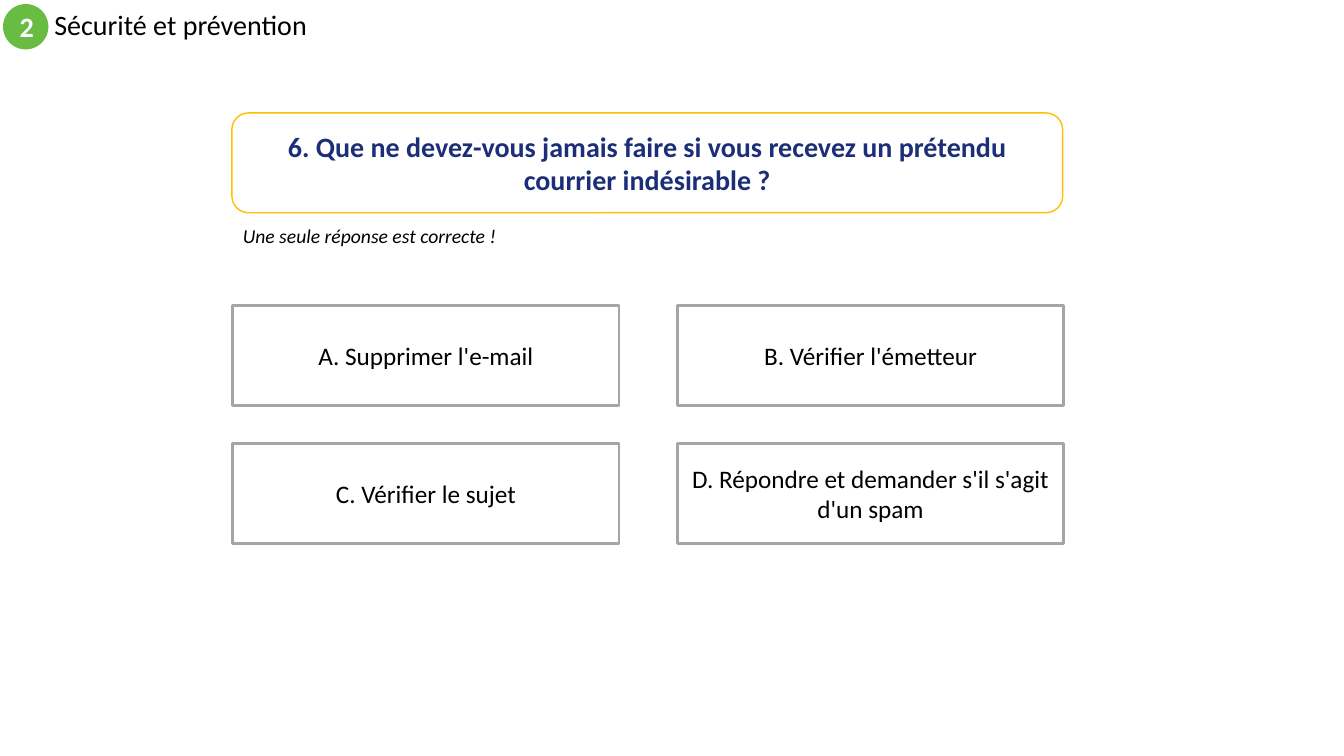
"""Build a quiz slide on security and prevention with four possible answers."""
from dataclasses import dataclass
from typing import Optional

from pptx import Presentation
from pptx.dml.color import RGBColor
from pptx.enum import shapes, text
from pptx.slide import Slide
from pptx.util import Inches, Pt


@dataclass(frozen=True)
class Theme:
    """Colours, font and type sizes of the slide."""
    font: str = "Calibri"
    white: str = "FFFFFF"
    black: str = "000000"
    green: str = "68BC42"
    gold: str = "FFC000"
    navy: str = "1C2E78"
    grey: str = "A5A5A5"
    heading: int = 20
    answer: int = 18
    hint: int = 14


THEME = Theme()


@dataclass(frozen=True)
class Block:
    """A piece of text with its place, optional outline shape and style."""
    wording: str
    left: float
    top: float
    width: float
    height: float
    size: int
    color: str = THEME.black
    bold: bool = False
    italic: bool = False
    preset: Optional[shapes.MSO_SHAPE] = None
    fill: str = THEME.white
    line: Optional[str] = None
    line_width: float = 1
    anchor: text.MSO_ANCHOR = text.MSO_ANCHOR.MIDDLE
    spacing: float = 1.0


def draw_block(slide: Slide, block: Block) -> None:
    """Draw a block as a preset shape, or as a text box without one."""
    place = [Inches(n) for n in (block.left, block.top, block.width, block.height)]
    if block.preset is None:
        drawn = slide.shapes.add_textbox(*place)
    else:
        drawn = slide.shapes.add_shape(block.preset, *place)
        drawn.shadow.inherit = False
        drawn.fill.solid()
        drawn.fill.fore_color.rgb = RGBColor.from_string(block.fill)
        if block.line is None:
            drawn.line.fill.background()
        else:
            drawn.line.color.rgb = RGBColor.from_string(block.line)
            drawn.line.width = Pt(block.line_width)
    frame = drawn.text_frame
    frame.word_wrap = True
    frame.vertical_anchor = block.anchor
    frame.text = block.wording
    paragraph = frame.paragraphs[0]
    paragraph.alignment = text.PP_ALIGN.CENTER if block.preset else text.PP_ALIGN.LEFT
    paragraph.line_spacing = block.spacing
    font = paragraph.runs[0].font
    font.name = THEME.font
    font.size = Pt(block.size)
    font.bold = block.bold
    font.italic = block.italic
    font.color.rgb = RGBColor.from_string(block.color)


HEADER = [
    Block("2", 0.03, 0.04, 0.45, 0.45, THEME.heading, THEME.white, bold=True,
          preset=shapes.MSO_SHAPE.OVAL, fill=THEME.green),
    Block("Sécurité et prévention", 0.44, 0.04, 8, 0.45, THEME.heading, spacing=0.9),
]
QUESTION = [
    Block("6. Que ne devez-vous jamais faire si vous recevez un prétendu courrier indésirable ?",
          2.3, 1.12, 8.24, 0.99, THEME.heading, THEME.navy, bold=True,
          preset=shapes.MSO_SHAPE.ROUNDED_RECTANGLE, line=THEME.gold),
    Block("Une seule réponse est correcte !", 2.31, 2.17, 3.56, 0.34, THEME.hint,
          italic=True, anchor=text.MSO_ANCHOR.TOP),
]
ANSWERS = [
    "A. Supprimer l'e-mail",
    "B. Vérifier l'émetteur",
    "C. Vérifier le sujet",
    "D. Répondre et demander s'il s'agit d'un spam",
]
ANSWER_LEFT, ANSWER_TOP = 2.31, 3.03
COLUMN_STEP, ROW_STEP = 4.41, 1.37


def answer_block(index: int, wording: str) -> Block:
    """Place an answer in the grid of two columns."""
    row, column = divmod(index, 2)
    return Block(wording, ANSWER_LEFT + column * COLUMN_STEP, ANSWER_TOP + row * ROW_STEP,
                 3.83, 0.99, THEME.answer, preset=shapes.MSO_SHAPE.RECTANGLE,
                 line=THEME.grey, line_width=2)


def main() -> None:
    """Assemble the slide and save it."""
    deck = Presentation()
    deck.slide_width, deck.slide_height = Inches(13.33), Inches(7.5)
    slide = deck.slides.add_slide(deck.slide_layouts[6])
    answers = [answer_block(index, wording) for index, wording in enumerate(ANSWERS)]
    for block in HEADER + QUESTION + answers:
        draw_block(slide, block)
    deck.save("out.pptx")


if __name__ == "__main__":
    main()
